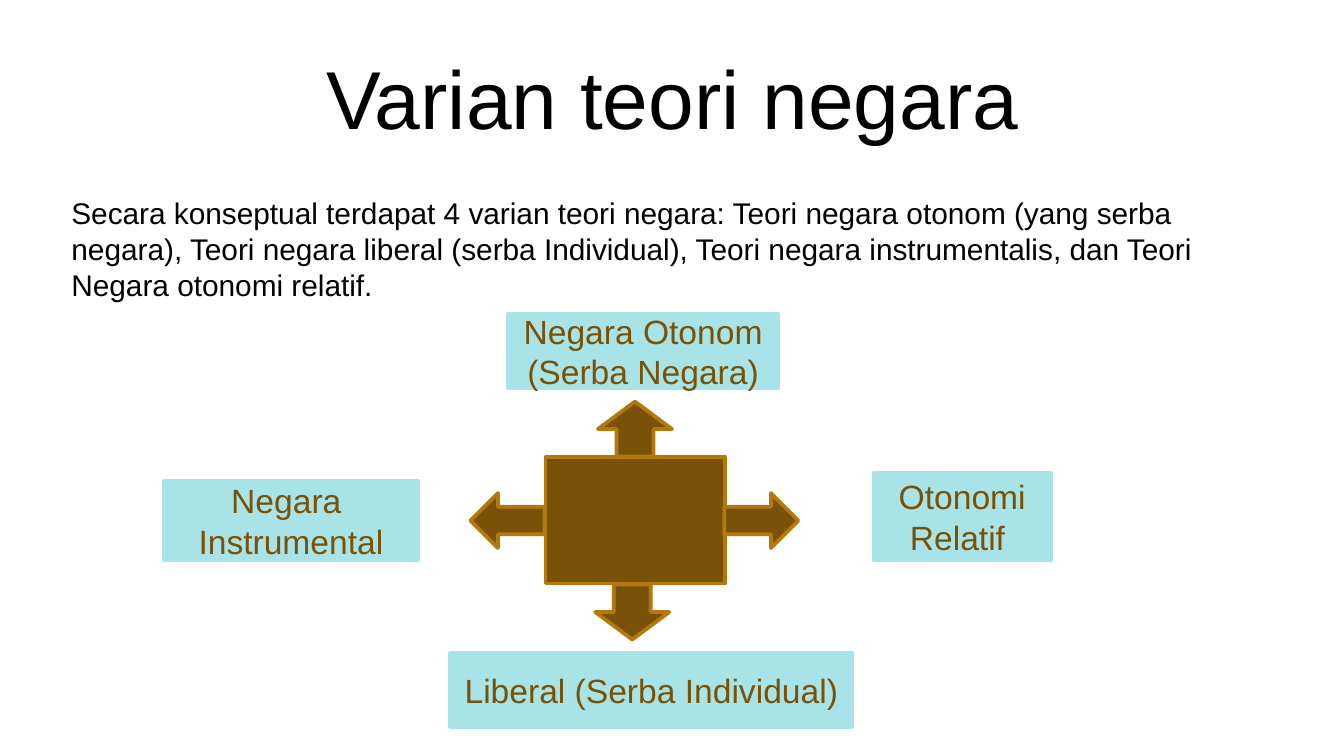
from dataclasses import dataclass

from pptx import Presentation
from pptx.dml.color import RGBColor as Rgb
from pptx.enum.shapes import MSO_SHAPE as Preset
from pptx.enum.text import MSO_ANCHOR as Anchor, PP_ALIGN as Align
from pptx.shapes.autoshape import Shape
from pptx.slide import Slide
from pptx.text.text import TextFrame
from pptx.util import Cm, Pt


@dataclass(frozen=True)
class Theme:
    font: str = "Arial"
    ink: Rgb = Rgb(0x00, 0x00, 0x00)
    brown: Rgb = Rgb(0x79, 0x52, 0x07)
    amber: Rgb = Rgb(0xB3, 0x79, 0x0A)
    aqua: Rgb = Rgb(0xA8, 0xE3, 0xE7)
    title_size: int = 44
    body_size: int = 16
    label_size: int = 18
    outline: int = 2


@dataclass(frozen=True)
class Box:
    left: float
    top: float
    width: float
    height: float

    def lengths(self) -> tuple[Cm, Cm, Cm, Cm]:
        return Cm(self.left), Cm(self.top), Cm(self.width), Cm(self.height)


@dataclass(frozen=True)
class Variant:
    lines: tuple[str, ...]
    box: Box


@dataclass(frozen=True)
class Arrow:
    center_x: float
    center_y: float
    rotation: int


THEME = Theme()
ARROW_WIDTH, ARROW_LENGTH = 1.4, 1.04

TITLE = "Varian teori negara"
INTRO = (
    "Secara konseptual terdapat 4 varian teori negara: Teori negara otonom "
    "(yang serba negara), Teori negara liberal (serba Individual), Teori negara "
    "instrumentalis, dan Teori Negara otonomi relatif."
)
STATE = Box(10.31, 8.64, 3.4, 2.39)
ARROWS = (
    Arrow(12, 8.11, 180),
    Arrow(14.39, 9.84, 270),
    Arrow(9.59, 9.84, 90),
    Arrow(11.95, 11.57, 0),
)
VARIANTS = (
    Variant(("Negara ", "Instrumental"), Box(3.1, 9.09, 4.8, 1.5)),
    Variant(("Otonomi Relatif ",), Box(16.51, 8.94, 3.35, 1.65)),
    Variant(("Negara Otonom (Serba Negara)",), Box(9.6, 5.94, 5.11, 1.4)),
    Variant(("Liberal (Serba Individual)",), Box(8.51, 12.34, 7.6, 1.4)),
)


def write(frame: TextFrame, lines: tuple[str, ...], size: int, color: Rgb,
          align: Align, anchor: Anchor) -> None:
    frame.word_wrap = True
    frame.vertical_anchor = anchor
    frame.text = "\n".join(lines)
    for paragraph in frame.paragraphs:
        paragraph.alignment = align
        paragraph.font.name = THEME.font
        paragraph.font.size = Pt(size)
        paragraph.font.color.rgb = color


def add_block(slide: Slide, preset: Preset, box: Box, fill: Rgb, line: Rgb) -> Shape:
    block = slide.shapes.add_shape(preset, *box.lengths())
    block.shadow.inherit = False
    block.fill.solid()
    block.fill.fore_color.rgb = fill
    block.line.color.rgb = line
    block.line.width = Pt(THEME.outline)
    return block


def add_arrow(slide: Slide, arrow: Arrow) -> None:
    box = Box(arrow.center_x - ARROW_WIDTH / 2, arrow.center_y - ARROW_LENGTH / 2,
              ARROW_WIDTH, ARROW_LENGTH)
    if arrow.rotation in (90, 270):
        box = Box(arrow.center_x - ARROW_LENGTH / 2, arrow.center_y - ARROW_WIDTH / 2,
                  ARROW_LENGTH, ARROW_WIDTH)
    pointer = add_block(slide, Preset.DOWN_ARROW, box, THEME.brown, THEME.amber)
    pointer.rotation = arrow.rotation


def add_variant(slide: Slide, variant: Variant) -> None:
    label = add_block(slide, Preset.RECTANGLE, variant.box, THEME.aqua, THEME.aqua)
    write(label.text_frame, variant.lines, THEME.label_size, THEME.brown,
          Align.CENTER, Anchor.MIDDLE)


def main() -> None:
    deck = Presentation()
    deck.slide_width, deck.slide_height = Cm(25.4), Cm(14.29)
    slide = deck.slides.add_slide(deck.slide_layouts[6])

    intro = slide.shapes.add_textbox(*Box(0.97, 3.56, 23.34, 9.75).lengths()).text_frame
    write(intro, (INTRO,), THEME.body_size, THEME.ink, Align.LEFT, Anchor.TOP)
    intro.margin_left = Cm(0.38)

    title = slide.shapes.add_textbox(*Box(1.07, 0.74, 23.29, 2.18).lengths()).text_frame
    write(title, (TITLE,), THEME.title_size, THEME.ink, Align.CENTER, Anchor.MIDDLE)

    add_block(slide, Preset.RECTANGLE, STATE, THEME.brown, THEME.amber)
    for arrow in ARROWS:
        add_arrow(slide, arrow)
    for variant in VARIANTS:
        add_variant(slide, variant)

    deck.save("out.pptx")


if __name__ == "__main__":
    main()
